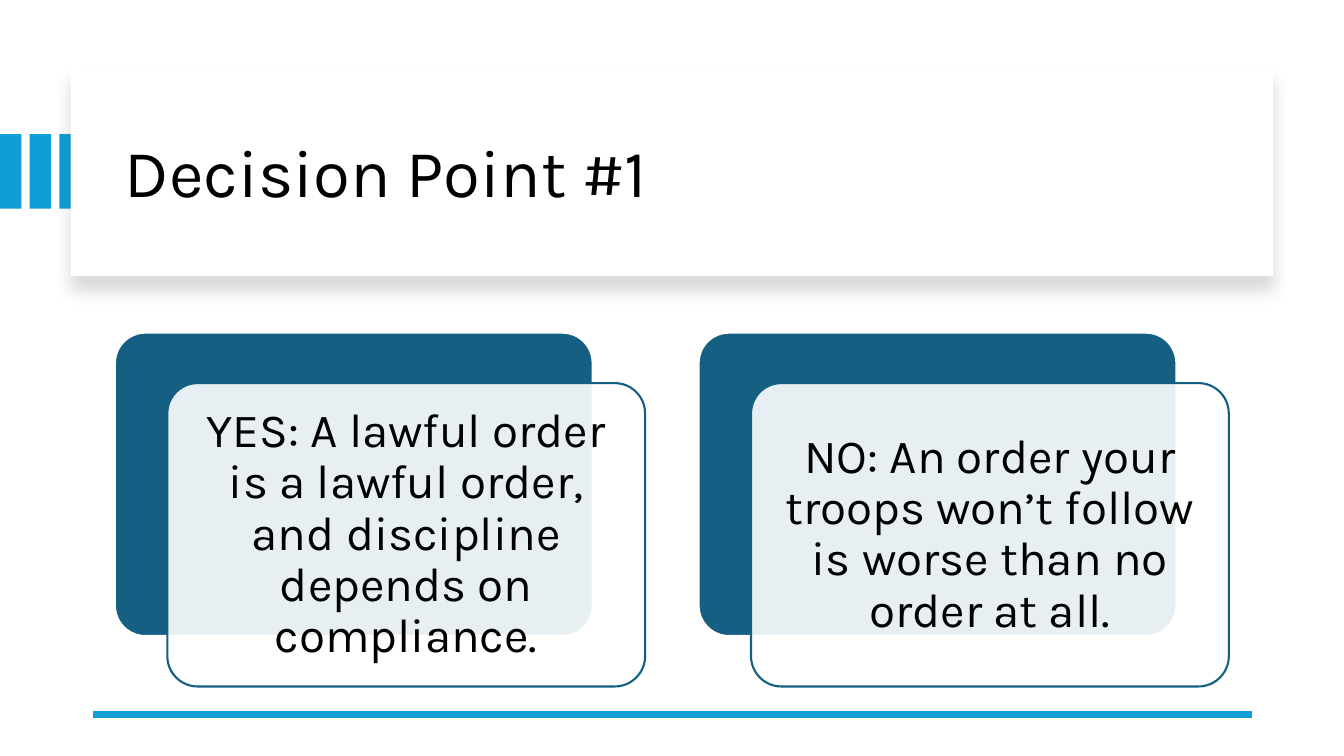
from dataclasses import dataclass

from lxml.etree import SubElement
from pptx import Presentation
from pptx.dml.color import RGBColor
from pptx.enum.shapes import MSO_CONNECTOR, MSO_SHAPE
from pptx.enum.text import MSO_ANCHOR, PP_ALIGN
from pptx.oxml.ns import qn
from pptx.util import Inches, Pt

WIDTH, HEIGHT = Inches(13.33), Inches(7.5)
BLUE, TEAL, WHITE, BLACK = "0F9ED5", "156082", "FFFFFF", "000000"
FONT = "Karla"


# The slide is a grid of 100 columns by 100 rows
def columns(count: float) -> int:
    return round(WIDTH * count / 100)


def rows(count: float) -> int:
    return round(HEIGHT * count / 100)


@dataclass(frozen=True)
class Area:
    left: float
    top: float
    width: float
    height: float

    def moved(self, across: float, down: float = 0) -> "Area":
        return Area(self.left + across, self.top + down, self.width, self.height)

    def inset(self, across: float, down: float) -> "Area":
        return Area(self.left + across, self.top + down,
                    self.width - 2 * across, self.height - 2 * down)

    def emu(self) -> tuple[int, int, int, int]:
        return columns(self.left), rows(self.top), columns(self.width), rows(self.height)


@dataclass(frozen=True)
class Choice:
    column: int
    text: str


def paint(color_format, color: str, alpha: int = 100) -> None:
    """Set a solid fill's or line's colour and its opacity in percent."""
    color_format.rgb = RGBColor.from_string(color)
    if alpha < 100:
        rgb = color_format._xFill.find(qn("a:srgbClr"))
        SubElement(rgb, qn("a:alpha"), val=str(alpha * 1000))


def add_panel(slide, kind, area: Area, fill: str, outline: str = "", alpha: int = 100):
    panel = slide.shapes.add_shape(kind, *area.emu())
    panel.shadow.inherit = False
    panel.fill.solid()
    paint(panel.fill.fore_color, fill)
    if alpha < 100:
        rgb = panel.fill._xPr.find(qn("a:solidFill")).find(qn("a:srgbClr"))
        SubElement(rgb, qn("a:alpha"), val=str(alpha * 1000))
    if outline:
        paint(panel.line.color, outline)
        panel.line.width = Pt(1.5)
    else:
        panel.line.fill.background()
    if kind == MSO_SHAPE.ROUNDED_RECTANGLE:
        panel.adjustments[0] = 0.1
    return panel


def add_text(slide, area: Area, text: str, size: int, align: PP_ALIGN, margin: dict) -> None:
    frame = slide.shapes.add_textbox(*area.emu()).text_frame
    paragraph = frame.paragraphs[0]
    paragraph.text = text
    formats = {
        frame: {"word_wrap": True, "vertical_anchor": MSO_ANCHOR.MIDDLE, **margin},
        paragraph: {"alignment": align, "line_spacing": 0.9},
        paragraph.font: {"name": FONT, "size": Pt(size)},
    }
    for target, values in formats.items():
        for name, value in values.items():
            setattr(target, name, value)
    paint(paragraph.font.color, BLACK)


def add_title_card(slide) -> None:
    # Accent bars, the last one partly behind the card
    bar = Area(0, 17.75, 1.6, 9.87)
    for index in range(3):
        add_panel(slide, MSO_SHAPE.RECTANGLE, bar.moved(2.21 * index), BLUE)

    # Card with a soft shadow below it
    card = add_panel(slide, MSO_SHAPE.RECTANGLE, Area(5.25, 8.93, 89.47, 27.6), WHITE)
    effects = card._element.spPr.find(qn("a:effectLst"))
    shadow = SubElement(effects, qn("a:outerShdw"), blurRad=str(Pt(11)),
                        dist=str(Pt(10)), dir=str(90 * 60000), rotWithShape="0")
    tint = SubElement(shadow, qn("a:srgbClr"), val=BLACK)
    SubElement(tint, qn("a:alpha"), val="15000")

    add_text(slide, Area(8.55, 11.87, 83.5, 22.67), "Decision Point #1", 48, PP_ALIGN.LEFT, {})


def add_footer_rule(slide) -> None:
    rule = slide.shapes.add_connector(MSO_CONNECTOR.STRAIGHT, columns(93.15), rows(94.53),
                                      columns(6.9), rows(94.53))
    paint(rule.line.color, BLUE)
    rule.line.width = Pt(4.5)
    SubElement(rule._element.spPr, qn("a:effectLst"))


def add_choice(slide, choice: Choice) -> None:
    back = Area(8.55, 44, 35.55, 40.13).moved(43.43 * choice.column)
    front = back.moved(3.9, 6.67)
    add_panel(slide, MSO_SHAPE.ROUNDED_RECTANGLE, back, TEAL, WHITE)
    add_panel(slide, MSO_SHAPE.ROUNDED_RECTANGLE, front, WHITE, TEAL, alpha=90)
    margin = {f"margin_{side}": Inches(0.14) for side in ("left", "top", "right", "bottom")}
    add_text(slide, front.inset(0.68, 1.2), choice.text, 34, PP_ALIGN.CENTER, margin)


CHOICES = (
    Choice(0, "YES: A lawful order is a lawful order, and discipline depends on compliance."),
    Choice(1, "NO: An order your troops won’t follow is worse than no order at all."),
)


def main() -> None:
    deck = Presentation()
    deck.slide_width, deck.slide_height = WIDTH, HEIGHT
    slide = deck.slides.add_slide(deck.slide_layouts[6])
    add_title_card(slide)
    add_footer_rule(slide)
    for choice in CHOICES:
        add_choice(slide, choice)
    deck.save("out.pptx")


if __name__ == "__main__":
    main()
